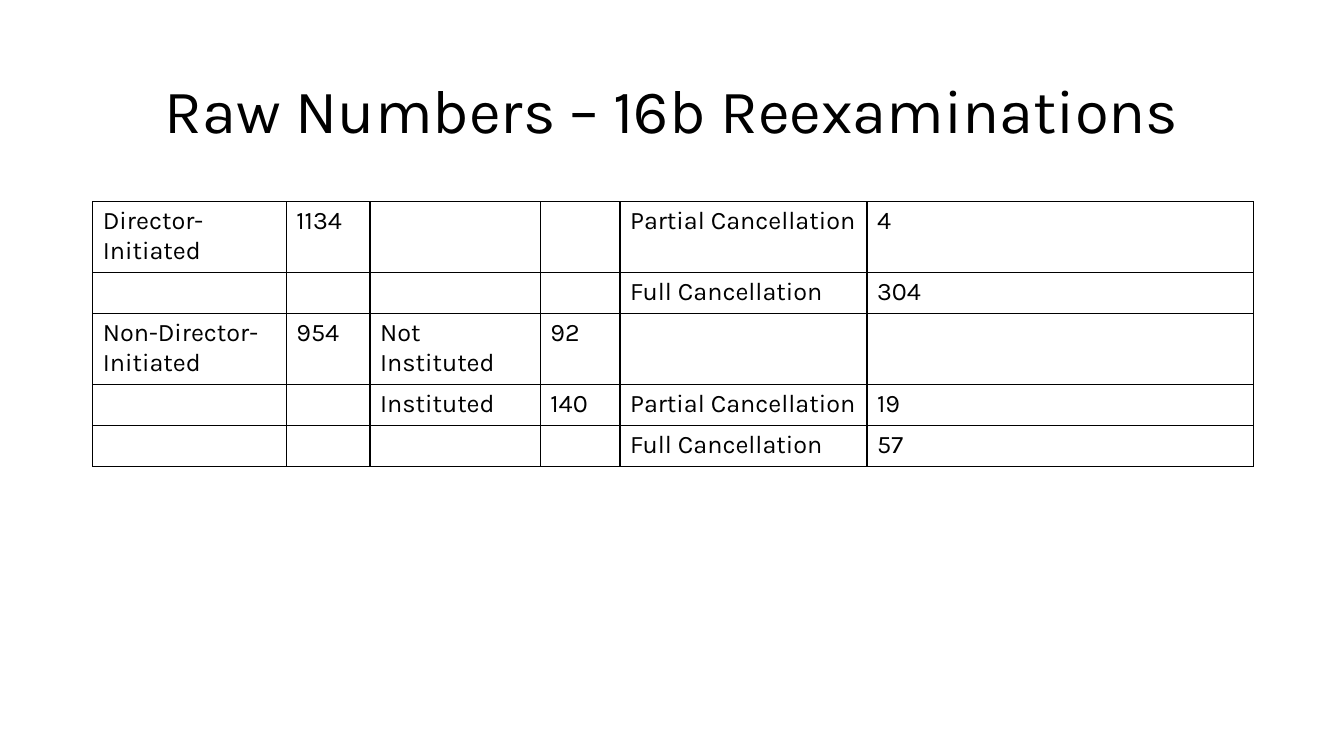
from pptx import Presentation, util as u
from pptx.dml.color import RGBColor
from pptx.enum import text
from pptx.oxml import parse_xml
from pptx.oxml.ns import nsdecls

SLIDE_WIDTH, SLIDE_HEIGHT = 13.33, 7.5
LEFT, CONTENT_WIDTH = 0.92, 11.5
INK, PAPER = "000000", "FFFFFF"
COLUMN_WIDTHS = [1.92, 0.83, 1.69, 0.79, 2.45, 3.83]
ROW_HEIGHT = 0.41
REEXAMINATIONS = [
    ["Director-Initiated", "1134", "", "", "Partial Cancellation", "4"],
    ["", "", "", "", "Full Cancellation", "304"],
    ["Non-Director-Initiated", "954", "Not Instituted", "92", "", ""],
    ["", "", "Instituted", "140", "Partial Cancellation", "19"],
    ["", "", "", "", "Full Cancellation", "57"],
]


def color(hex_code):
    return RGBColor.from_string(hex_code)


def apply(target, formats):
    for name, value in formats.items():
        setattr(target, name, value)


def write(paragraph, words, size):
    run = paragraph.add_run()
    run.text = words
    apply(run.font, {"name": "Karla", "size": u.Pt(size), "bold": False})
    run.font.color.rgb = color(INK)


def outline(cell, width=1):
    """Draw all four cell borders; call before setting the cell's fill."""
    properties = cell._tc.get_or_add_tcPr()
    for side in "LRTB":
        properties.append(parse_xml(
            f'<a:ln{side} {nsdecls("a")} w="{u.Pt(width)}"><a:solidFill>'
            f'<a:srgbClr val="{INK}"/></a:solidFill></a:ln{side}>'))


def add_title(slide, box, words):
    frame = slide.shapes.add_textbox(*map(u.Inches, box)).text_frame
    apply(frame, {"word_wrap": True,
                  "vertical_anchor": text.MSO_ANCHOR.MIDDLE})
    heading = frame.paragraphs[0]
    apply(heading, {"alignment": text.PP_ALIGN.CENTER, "line_spacing": 0.9})
    write(heading, words, 44)


def add_counts(slide, box, rows):
    table = slide.shapes.add_table(
        len(rows), len(COLUMN_WIDTHS), *map(u.Inches, box)).table
    apply(table, {"first_row": False, "horz_banding": False})
    for column, width in zip(table.columns, COLUMN_WIDTHS):
        column.width = u.Inches(width)
    for row, entries in zip(table.rows, rows):
        row.height = u.Inches(ROW_HEIGHT)
        for cell, entry in zip(row.cells, entries):
            outline(cell)
            cell.fill.background()
            if entry:
                write(cell.text_frame.paragraphs[0], entry, 18)


def main():
    deck = Presentation()
    apply(deck, {"slide_width": u.Inches(SLIDE_WIDTH),
                 "slide_height": u.Inches(SLIDE_HEIGHT)})
    slide = deck.slides.add_slide(deck.slide_layouts[6])
    slide.background.fill.solid()
    slide.background.fill.fore_color.rgb = color(PAPER)
    add_title(slide, (LEFT, 0.4, CONTENT_WIDTH, 1.45),
              "Raw Numbers – 16b Reexaminations")
    add_counts(slide,
               (LEFT, 2, CONTENT_WIDTH, ROW_HEIGHT * len(REEXAMINATIONS)),
               REEXAMINATIONS)
    deck.save("out.pptx")


if __name__ == "__main__":
    main()
